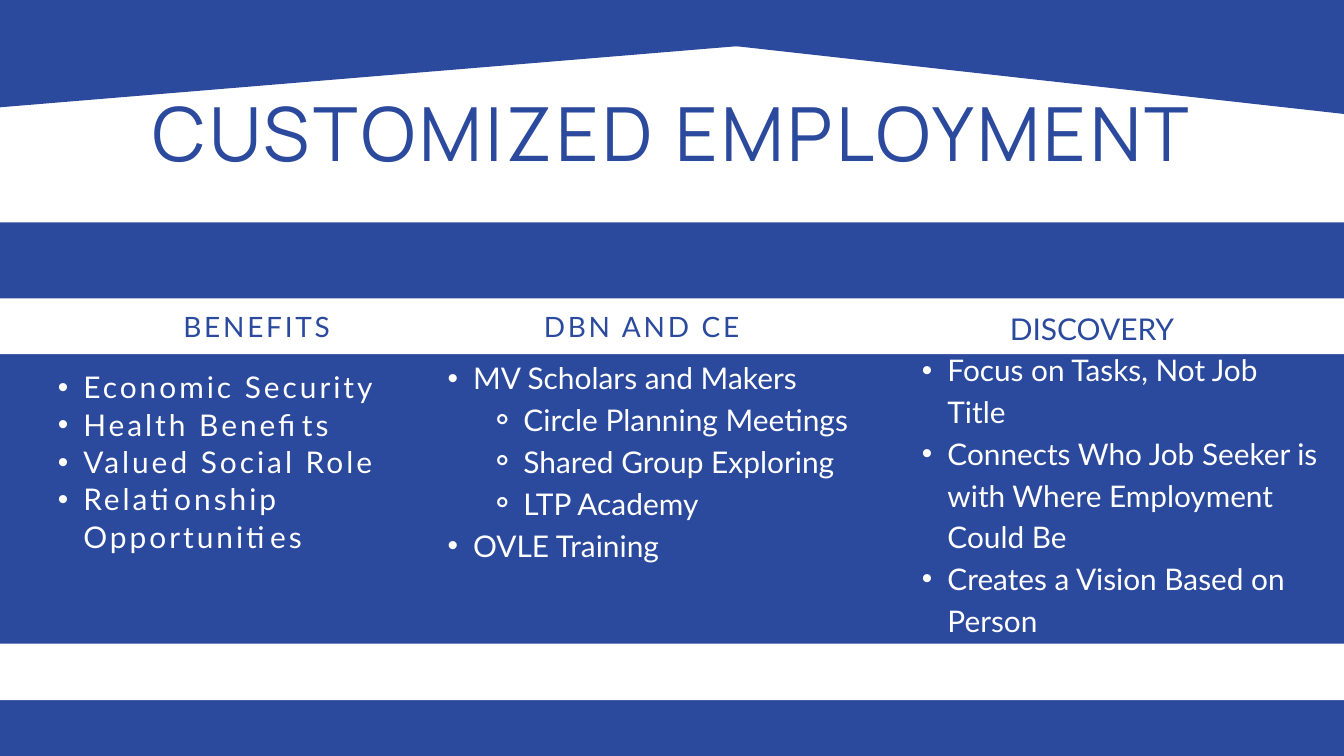
from pptx import Presentation
from pptx.dml.color import RGBColor
from pptx.enum import shapes, text
from pptx.oxml import parse_xml
from pptx.oxml.ns import nsdecls
from pptx.util import Inches, Pt

COLORS = {"blue": "2B4A9D", "white": "FFFFFF"}
WIDE, HIGH = 20, 11.25

# left, top, width, height, rotation, color
BANDS = [
    (0, 3.31, WIDE, 7.94, 0, "blue"),
    (0, 4.44, WIDE, 0.83, 0, "white"),
    (4.16, -0.77, WIDE, 1.81, 6.36, "blue"),
    (-4.16, -0.7, WIDE, 1.81, -4.74, "blue"),
    (0, 9.58, WIDE, 0.84, 0, "white"),
]

LEFT, MID, JUST = (text.PP_ALIGN.LEFT, text.PP_ALIGN.CENTER,
                   text.PP_ALIGN.JUSTIFY)
BULLETS = {1: ("•", 0.76, -0.38), 2: ("⚬", 1.51, -0.5)}

# box, style (font, size, line pitch, letter spacing, color, align)
TITLES = [
    ("CUSTOMIZED EMPLOYMENT", (1.62, 1.46, 16.76, 1.3),
     ("Manrope", 80, 84, 4, "blue", MID)),
    ("BENEFITS", (0.48, 4.53, 6.68, 0.57), ("Lato", 30, 42, 3, "blue", MID)),
    ("DBN AND CE", (7.26, 4.53, 4.58, 0.57),
     ("Lato", 30, 42, 3, "blue", MID)),
    ("DISCOVERY", (12.86, 4.53, 6.78, 0.6),
     ("Lato", 32.1, 45, 0, "blue", MID)),
]

LISTS = [
    ([(1, "Economic Security"), (1, "Health Benefits"),
      (1, "Valued Social Role"), (1, "Relationship Opportunities")],
     (0.48, 5.47, 6.44, 3.32), ("Lato", 32, 40, 3.2, "white", JUST)),
    ([(1, "MV Scholars and Makers"), (2, "Circle Planning Meetings"),
      (2, "Shared Group Exploring"), (2, "LTP Academy"),
      (1, "OVLE Training")],
     (6.28, 5.27, 6.54, 3.06), ("Lato", 32, 44.8, 0, "white", LEFT)),
    ([(1, "Focus on Tasks, Not Job Title"),
      (1, "Connects Who Job Seeker is with Where Employment Could Be"),
      (1, "Creates a Vision Based on Person")],
     (13.34, 5.15, 6.3, 4.29), ("Lato", 31.9, 44.7, 0, "white", LEFT)),
]


def tint(name):
    return RGBColor.from_string(COLORS[name])


def add_band(slide, *spec):
    *box, turn, color = spec
    band = slide.shapes.add_shape(shapes.MSO_SHAPE.RECTANGLE,
                                  *map(Inches, box))
    band.rotation = turn
    band.shadow.inherit = False
    band.fill.solid()
    band.fill.fore_color.rgb = tint(color)
    band.line.fill.background()


def add_bullet(para, level):
    mark, left, hang = BULLETS[level]
    para.level = level
    props = para._p.get_or_add_pPr()
    props.set("marL", str(Inches(left)))
    props.set("indent", str(Inches(hang)))
    for xml in (f'<a:buFont {nsdecls("a")} typeface="Arial"/>',
                f'<a:buChar {nsdecls("a")} char="{mark}"/>'):
        props.append(parse_xml(xml))


def add_text(slide, lines, box, style):
    """Lines are (level, words) pairs; level 0 has no bullet."""
    font, size, pitch, gap, color, align = style
    frame = slide.shapes.add_textbox(*map(Inches, box)).text_frame
    frame.word_wrap = True
    for side in ("left", "top", "right", "bottom"):
        setattr(frame, f"margin_{side}", 0)
    for i, (level, words) in enumerate(lines):
        para = frame.add_paragraph() if i else frame.paragraphs[0]
        para.alignment = align
        para.line_spacing = Pt(pitch)
        if level:
            add_bullet(para, level)
        run = para.add_run()
        run.text = words
        for key, value in {"name": font, "size": Pt(size)}.items():
            setattr(run.font, key, value)
        run.font.color.rgb = tint(color)
        if gap:
            run._r.get_or_add_rPr().set("spc", str(round(gap * 100)))


def main():
    deck = Presentation()
    deck.slide_width, deck.slide_height = Inches(WIDE), Inches(HIGH)
    slide = deck.slides.add_slide(deck.slide_layouts[6])
    for band in BANDS:
        add_band(slide, *band)
    for words, box, style in TITLES:
        add_text(slide, [(0, words)], box, style)
    for lines, box, style in LISTS:
        add_text(slide, lines, box, style)
    deck.save("out.pptx")


if __name__ == "__main__":
    main()
